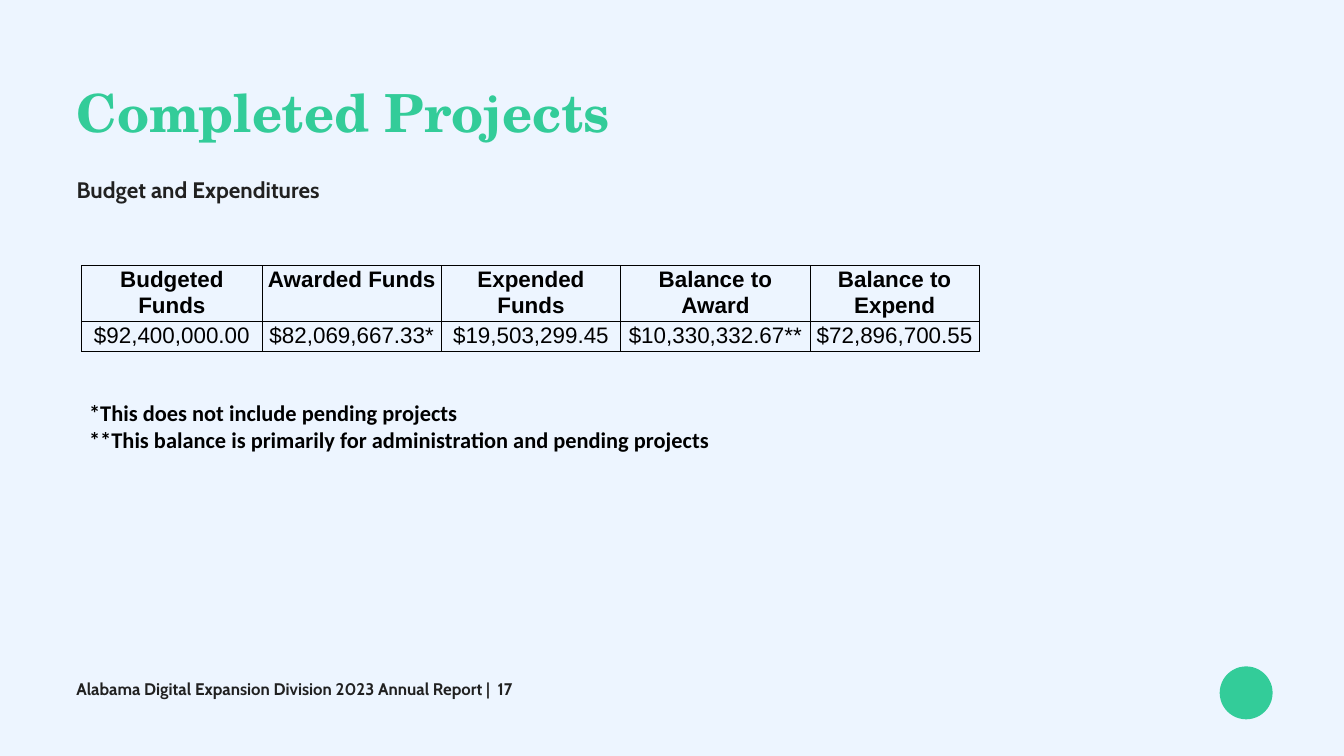
from lxml.etree import SubElement
from pptx import Presentation
from pptx.dml.color import RGBColor
from pptx.enum.shapes import MSO_SHAPE as Shape
from pptx.enum.text import MSO_ANCHOR as Anchor, MSO_AUTO_SIZE as AutoSize, PP_ALIGN as Align
from pptx.oxml.ns import qn
from pptx.util import Pt

GREEN = RGBColor(0x33, 0xCC, 0x99)
INK = RGBColor(0x21, 0x21, 0x21)
BLACK = RGBColor(0, 0, 0)
PALE = RGBColor(0xED, 0xF5, 0xFF)


class Deck:
    serif, sans, notes, grid = "TeX Gyre Schola", "Cabin", "Calibri", "Arial"

    def __init__(self, width, height):
        self.prs = Presentation()
        self.prs.slide_width, self.prs.slide_height = Pt(width), Pt(height)
        self.s = self.prs.slides.add_slide(self.prs.slide_layouts[1])
        fill = self.s.background.fill
        fill.solid()
        fill.fore_color.rgb = PALE

    def add_run(self, p, text, font, size, color, bold=True, align=Align.LEFT, spacing=1.0):
        p.alignment, p.line_spacing, p.space_before = align, spacing, Pt(0)
        r = p.add_run()
        r.text = text
        r.font.name, r.font.size, r.font.bold = font, Pt(size), bold
        r.font.color.rgb = color

    def frame(self, sp, box, lines, font, size, color, spacing=1.0, inset=7.2, indent=0):
        sp.left, sp.top, sp.width, sp.height = map(Pt, box)
        tf = sp.text_frame
        tf.word_wrap, tf.auto_size, tf.vertical_anchor = True, AutoSize.NONE, Anchor.TOP
        tf.margin_left = tf.margin_right = Pt(inset)
        tf.margin_top = tf.margin_bottom = Pt(3.6)
        for i, line in enumerate(lines):
            p = tf.add_paragraph() if i else tf.paragraphs[0]
            pPr = p._p.get_or_add_pPr()
            pPr.set("marL", str(Pt(indent)))
            pPr.set("indent", "0")
            SubElement(pPr, qn("a:buNone"))
            self.add_run(p, line, font, size, color, spacing=spacing)

    def title(self, box, text):
        self.frame(self.s.shapes.title, box, [text], self.serif, 75, GREEN, 0.9, 5)

    def body(self, box, text):
        self.frame(self.s.placeholders[1], box, [text], self.sans, 32, INK, 1.5)

    def text(self, box, lines, *style, **options):
        self.frame(self.s.shapes.add_textbox(0, 0, 0, 0), box, lines, *style, **options)

    def dot(self, left, top, size):
        sp = self.s.shapes.add_shape(Shape.OVAL, Pt(left), Pt(top), Pt(size), Pt(size))
        sp.shadow.inherit = False
        sp.fill.solid()
        sp.fill.fore_color.rgb = GREEN
        sp.line.fill.background()

    def border(self, cell):
        tcPr = cell._tc.get_or_add_tcPr()
        for i, side in enumerate(("lnL", "lnR", "lnT", "lnB")):
            ln = tcPr.makeelement(qn(f"a:{side}"), {"w": str(Pt(1))})
            fill = SubElement(ln, qn("a:solidFill"))
            SubElement(fill, qn("a:srgbClr"), val=str(BLACK))
            tcPr.insert(i, ln)

    def table(self, left, top, widths, heights, rows):
        shape = self.s.shapes.add_table(len(rows), len(widths), Pt(left), Pt(top),
                                        Pt(sum(widths)), Pt(sum(heights)))
        table = shape.table
        table.horz_banding = False
        for column, width in zip(table.columns, widths):
            column.width = Pt(width)
        for i, (row, height) in enumerate(zip(rows, heights)):
            table.rows[i].height = Pt(height)
            for j, value in enumerate(row):
                cell = table.cell(i, j)
                cell.fill.background()
                cell.margin_left = cell.margin_right = Pt(5)
                cell.margin_top = cell.margin_bottom = Pt(3)
                self.border(cell)
                self.add_run(cell.text_frame.paragraphs[0], value, self.grid, 32, BLACK,
                             bold=i == 0, align=Align.CENTER)


def main():
    deck = Deck(1920, 1080)
    deck.dot(1742.4, 952, 75.6)
    deck.title((104.4, 120.2, 1710.7, 90), "Completed Projects")
    deck.body((102.2, 229, 1715, 644.4), "Budget and Expenditures")
    deck.text((102.2, 969.1, 1381, 34.6),
              ["Alabama Digital Expansion Division 2023 Annual Report |  17"],
              deck.sans, 24, INK, spacing=0.9)
    deck.table(116.6, 379.4, [258, 256, 256, 271, 241], [80, 43], [
        ["Budgeted Funds", "Awarded Funds", "Expended Funds",
         "Balance to Award", "Balance to Expend"],
        ["$92,400,000.00", "$82,069,667.33*", "$19,503,299.45",
         "$10,330,332.67**", "$72,896,700.55"],
    ])
    deck.text((102.2, 566.8, 960.5, 85),
              ["*This does not include pending projects",
               "**This balance is primarily for administration and pending projects"],
              deck.notes, 32, BLACK, indent=18)
    deck.prs.save("out.pptx")


if __name__ == "__main__":
    main()
